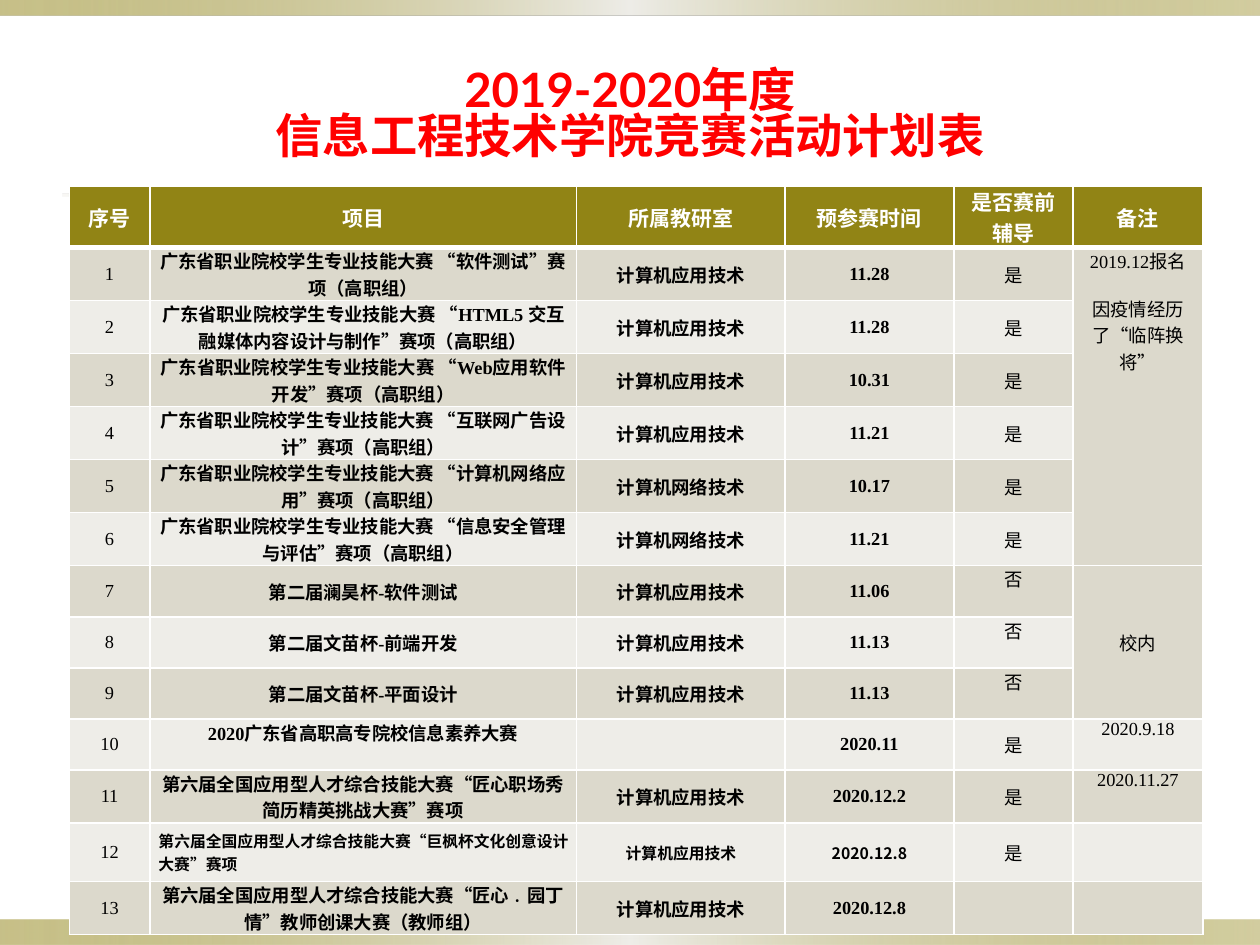
from lxml import etree
from pptx import Presentation
from pptx.dml.color import RGBColor
from pptx.enum.shapes import MSO_SHAPE
from pptx.enum.text import MSO_ANCHOR, MSO_AUTO_SIZE, PP_ALIGN
from pptx.oxml import parse_xml
from pptx.oxml.ns import nsdecls, qn
from pptx.util import Pt

RECTANGLE = MSO_SHAPE.RECTANGLE
TOP, MIDDLE = MSO_ANCHOR.TOP, MSO_ANCHOR.MIDDLE
CENTER, JUSTIFY = PP_ALIGN.CENTER, PP_ALIGN.JUSTIFY

COLORS = {
    "olive": "918415", "pale": "EEEDE8", "band": "DCD9CC",
    "white": "FFFFFF", "black": "000000", "red": "FF0000",
}
SERIF, SANS, CJK = "Times New Roman", "Lato", "Noto Sans CJK SC"

TITLE = "2019-2020年度\v信息工程技术学院竞赛活动计划表"
HEADERS = ["序号", "项目", "所属教研室", "预参赛时间", "是否赛前辅导", "备注"]
APPLICATION, NETWORK = "计算机应用技术", "计算机网络技术"
PROVINCE = "广东省职业院校学生专业技能大赛 "
NATIONAL = "第六届全国应用型人才综合技能大赛"
# project, teaching office, date, coaching, remark
CONTESTS = [
    (PROVINCE + "“软件测试”赛项（高职组）", APPLICATION, "11.28", "是",
     "2019.12报名\n因疫情经历了“临阵换将”"),
    (PROVINCE + "“HTML5 交互融媒体内容设计与制作”赛项（高职组）", APPLICATION, "11.28", "是", ""),
    (PROVINCE + "“Web应用软件开发”赛项（高职组）", APPLICATION, "10.31", "是", ""),
    (PROVINCE + "“互联网广告设计”赛项（高职组）", APPLICATION, "11.21", "是", ""),
    (PROVINCE + "“计算机网络应用”赛项（高职组）", NETWORK, "10.17", "是", ""),
    (PROVINCE + "“信息安全管理与评估”赛项（高职组）", NETWORK, "11.21", "是", ""),
    ("第二届澜昊杯-软件测试", APPLICATION, "11.06", "否", "校内"),
    ("第二届文苗杯-前端开发", APPLICATION, "11.13", "否", ""),
    ("第二届文苗杯-平面设计", APPLICATION, "11.13", "否", ""),
    ("2020广东省高职高专院校信息素养大赛", "", "2020.11", "是", "2020.9.18"),
    (NATIONAL + "“匠心职场秀简历精英挑战大赛”赛项", APPLICATION, "2020.12.2", "是", "2020.11.27"),
    (NATIONAL + "“巨枫杯文化创意设计大赛”赛项", APPLICATION, "2020.12.8", "是", ""),
    (NATIONAL + "“匠心﹒园丁情”教师创课大赛（教师组）", APPLICATION, "2020.12.8", "", ""),
]
REMARK_SPANS = [(1, 6), (7, 9)]
PROJECT, OFFICE, DATE, COACHING, REMARK = range(1, 6)
BOLD_COLUMNS = (PROJECT, OFFICE, DATE)
TOP_PROJECT_ROWS = (5, 6, 10, 11, 12, 13)
SMALL_ROW = 12

COLUMN_WIDTHS = [46, 244, 119, 96.5, 68, 74.5]
ROW_HEIGHT = 29.2
TABLE_LEFT, TABLE_TOP = 39.6, 106.6

# gradient stops: position, colour, opacity in percent
BAR_STOPS = [(0, "olive", 50), (50, "pale", 100), (100, "olive", 40)]
RULE_STOPS = [(0, "band", 20), (50, "olive", 40), (100, "band", 50)]
BARS = [
    ((0, 525.6, 720, 14.4), BAR_STOPS),
    ((0, 0, 720, 8.64), BAR_STOPS),
    ((36, 110.9, 648, 1.44), RULE_STOPS),
]


def set_attributes(target, values):
    for name, value in values.items():
        setattr(target, name, value)


def format_font(run, size, face, color, bold):
    set_attributes(run.font, {"size": Pt(size), "name": face, "bold": bold})
    run.font.color.rgb = RGBColor.from_string(COLORS[color])
    properties = run.font._element
    etree.SubElement(properties, qn("a:ea")).set("typeface", CJK)


def add_bar(slide, box, stops):
    shape = slide.shapes.add_shape(RECTANGLE, *(Pt(value) for value in box))
    shape.shadow.inherit = False
    shape.line.fill.background()
    stop_xml = "".join(
        f'<a:gs pos="{position * 1000}"><a:srgbClr val="{COLORS[color]}">'
        f'<a:alpha val="{opacity * 1000}"/></a:srgbClr></a:gs>'
        for position, color, opacity in stops)
    gradient = parse_xml(f'<a:gradFill {nsdecls("a")} rotWithShape="1"><a:gsLst>{stop_xml}'
                         '</a:gsLst><a:lin ang="0" scaled="0"/></a:gradFill>')
    shape._element.spPr.find(qn("a:prstGeom")).addnext(gradient)


def add_borders(cell, bottom_width):
    """Put white lines ahead of the fill, as the schema orders them."""
    widths = {"lnL": 1, "lnR": 1, "lnT": 1, "lnB": bottom_width}
    for index, (tag, width) in enumerate(widths.items()):
        line = parse_xml(f'<a:{tag} {nsdecls("a")} w="{Pt(width)}"><a:solidFill>'
                         f'<a:srgbClr val="{COLORS["white"]}"/></a:solidFill></a:{tag}>')
        cell._tc.get_or_add_tcPr().insert(index, line)


def fill_cell(cell, row, column, text):
    header = row == 0
    small = row == SMALL_ROW and column in BOLD_COLUMNS
    at_top = not header and (
        (column == PROJECT and row in TOP_PROJECT_ROWS)
        or text == "否" or (column == REMARK and text != "校内"))
    padding = Pt(3.6) if row == SMALL_ROW and column > 0 else 0
    set_attributes(cell, {
        "margin_left": Pt(5), "margin_right": Pt(5),
        "margin_top": padding, "margin_bottom": padding,
        "vertical_anchor": TOP if at_top else MIDDLE,
    })
    cell.fill.solid()
    fill = "olive" if header else "band" if row % 2 else "pale"
    cell.fill.fore_color.rgb = RGBColor.from_string(COLORS[fill])
    add_borders(cell, 3 if header else 1)
    size = 12 if header else 9 if small else 10.5
    cell.text = text
    for index, paragraph in enumerate(cell.text_frame.paragraphs):
        paragraph.alignment = JUSTIFY if small and column == PROJECT else CENTER
        paragraph.font.size = Pt(size)
        if index:
            paragraph.space_before = Pt(12)
        for run in paragraph.runs:
            format_font(run, size, CJK if small else SERIF,
                        "white" if header else "black",
                        header or column in BOLD_COLUMNS)


def add_title(slide):
    title = slide.shapes.title
    set_attributes(title, {"left": Pt(36), "top": Pt(21.6), "width": Pt(648), "height": Pt(90)})
    frame = title.text_frame
    set_attributes(frame, {"text": TITLE, "word_wrap": True,
                           "auto_size": MSO_AUTO_SIZE.NONE, "vertical_anchor": MIDDLE})
    paragraph = frame.paragraphs[0]
    set_attributes(paragraph, {"alignment": CENTER, "line_spacing": 0.82})
    for run in paragraph.runs:
        format_font(run, 27, SANS, "red", True)
    slide.shapes._spTree.append(title._element)


def add_schedule(slide):
    rows = [HEADERS] + [(str(number), *contest) for number, contest in enumerate(CONTESTS, 1)]
    table = slide.shapes.add_table(
        len(rows), len(HEADERS), Pt(TABLE_LEFT), Pt(TABLE_TOP),
        Pt(sum(COLUMN_WIDTHS)), Pt(ROW_HEIGHT * len(rows))).table
    table.horz_banding = False
    for column, width in zip(table.columns, COLUMN_WIDTHS):
        column.width = Pt(width)
    for row_index, values in enumerate(rows):
        table.rows[row_index].height = Pt(ROW_HEIGHT)
        for column_index, text in enumerate(values):
            fill_cell(table.cell(row_index, column_index), row_index, column_index, text)
    for first, last in REMARK_SPANS:
        table.cell(first, REMARK).merge(table.cell(last, REMARK))


def main():
    presentation = Presentation()
    set_attributes(presentation, {"slide_width": Pt(720), "slide_height": Pt(540)})
    slide = presentation.slides.add_slide(presentation.slide_layouts[5])
    for box, stops in BARS:
        add_bar(slide, box, stops)
    add_title(slide)
    add_schedule(slide)
    presentation.save("out.pptx")


if __name__ == "__main__":
    main()
